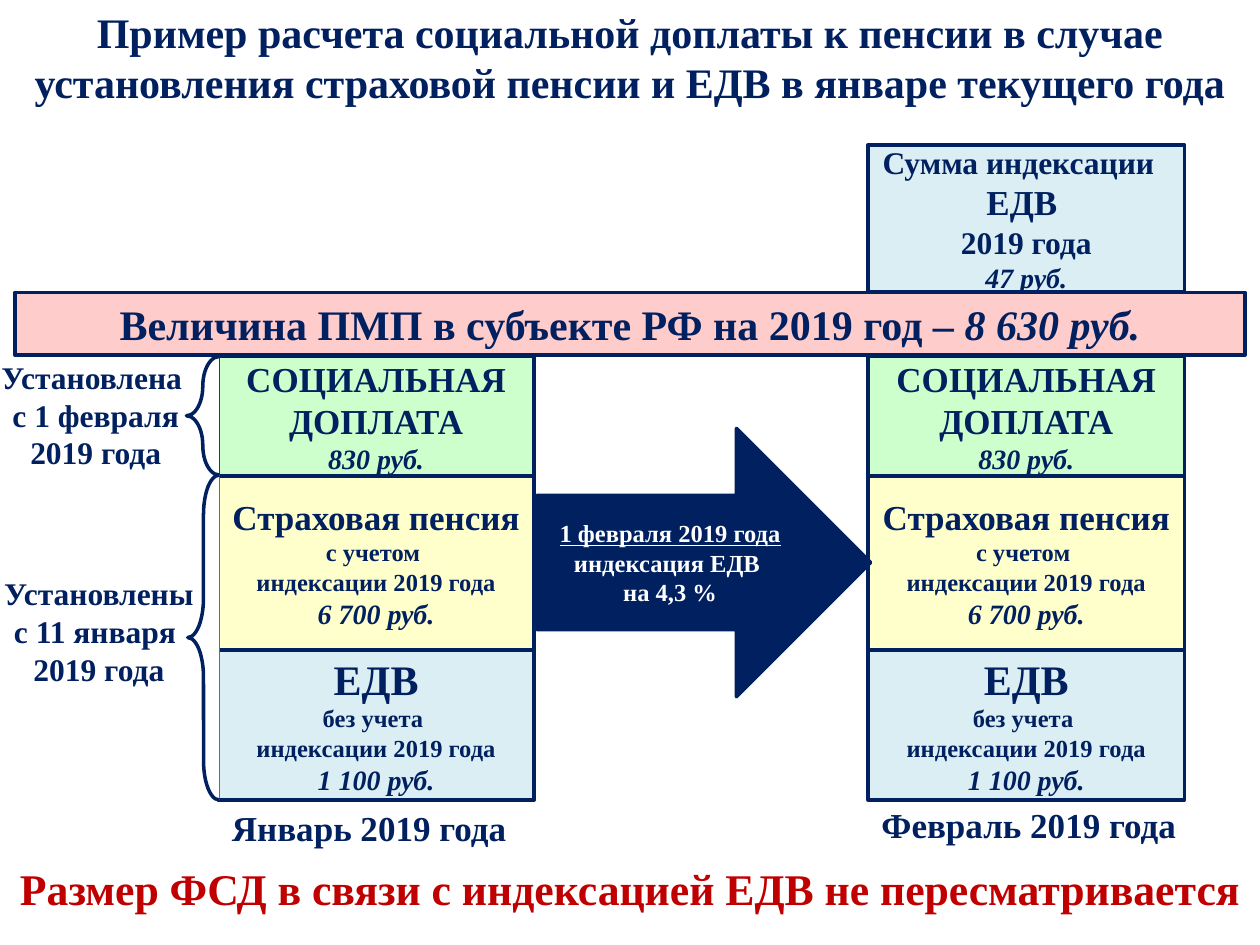
"""Build the slide on the social pension supplement before and after indexation."""
import pptx
import pptx.util
import pptx.dml.color
import pptx.enum.shapes
import pptx.enum.text

Inches = pptx.util.Inches
Shape = pptx.enum.shapes.MSO_SHAPE
Anchor = pptx.enum.text.MSO_ANCHOR
FONT = "Times New Roman"
COLORS = {
    "navy": "002060", "red": "C00000", "white": "FFFFFF", "pink": "FFCCCC",
    "blue": "DBEEF4", "yellow": "FFFFCC", "green": "CCFFCC",
}

TITLE = ("Пример расчета социальной доплаты к пенсии в случае "
         "установления страховой пенсии и ЕДВ в январе текущего года")
THRESHOLD = [[("Величина ПМП в субъекте РФ на 2019 год – ", {}),
              ("8 630 руб.", {"italic": True})]]
ARROW = [[("1 февраля 2019 года ", {"underline": True}), ("индексация ЕДВ ", {})],
         "на 4,3 %"]
CONCLUSION = "Размер ФСД в связи с индексацией ЕДВ не пересматривается"


def amount(text):
    """Return a paragraph holding a sum in italics."""
    return [(text, {"size": 16, "italic": True})]


def sized(text, size):
    """Return a paragraph of one size."""
    return [(text, {"size": size})]


COLUMN_LEFTS = [1.73, 6.89]
COLUMN_WIDTH = 2.51
LAYERS = [
    (2.83, 0.95, "green", [sized("СОЦИАЛЬНАЯ ДОПЛАТА", 20), amount("830 руб.")]),
    (3.77, 1.39, "yellow", [sized("Страховая пенсия ", 20), sized("с учетом ", 14),
                            sized("индексации 2019 года", 14), amount("6 700 руб.")]),
    (5.15, 1.2, "blue", [sized("ЕДВ", 24), sized("без учета ", 14),
                         sized("индексации 2019 года", 14), amount("1 100 руб.")]),
]
INDEXATION = [sized("Сумма индексации  ", 18), sized("ЕДВ ", 20),
              sized("2019 года", 18), amount("47 руб.")]
BRACES = [(1.49, 3.77, 0.25, 2.58), (1.48, 2.83, 0.26, 0.94)]
LABELS = [
    ((-0.08, 4.51, 1.73, 1.01), 18, "navy",
     ["Установлены ", "с 11 января ", "2019 года"]),
    ((-0.17, 2.79, 1.86, 1.01), 18, "navy",
     ["Установлена ", "с 1 февраля", "2019 года"]),
    ((1.6, 6.35, 2.66, 0.44), 20, "navy", ["Январь 2019 года"]),
    ((6.77, 6.33, 2.79, 0.44), 20, "navy", ["Февраль 2019 года"]),
    ((0, 6.79, 10, 0.52), 25, "red", [CONCLUSION]),
]


def rgb(name):
    """Return a named colour."""
    return pptx.dml.color.RGBColor.from_string(COLORS[name])


def write(box, paragraphs, size=18, color="navy", anchor=Anchor.TOP):
    """Fill a box with centred bold paragraphs of plain text or formatted spans."""
    frame = box.text_frame
    frame.word_wrap = True
    frame.auto_size = pptx.enum.text.MSO_AUTO_SIZE.NONE
    frame.vertical_anchor = anchor
    for index, content in enumerate(paragraphs):
        para = frame.add_paragraph() if index else frame.paragraphs[0]
        para.alignment = pptx.enum.text.PP_ALIGN.CENTER
        spans = [(content, {})] if isinstance(content, str) else content
        for text, style in spans:
            span = para.add_run()
            span.text = text
            span.font.name = FONT
            span.font.bold = True
            span.font.size = pptx.util.Pt(style.get("size", size))
            span.font.italic = style.get("italic")
            span.font.underline = style.get("underline")
            span.font.color.rgb = rgb(color)


def draw(page, kind, place, fill):
    """Add a preset shape with a navy outline."""
    shape = page.shapes.add_shape(kind, *map(Inches, place))
    shape.shadow.inherit = False
    shape.fill.solid()
    shape.fill.fore_color.rgb = rgb(fill)
    shape.line.color.rgb = rgb("navy")
    shape.line.width = pptx.util.Pt(2)
    return shape


def main():
    """Compose the slide and save it."""
    deck = pptx.Presentation()
    deck.slide_width, deck.slide_height = Inches(10), Inches(7.5)
    page = deck.slides.add_slide(deck.slide_layouts[5])

    title = page.shapes.title
    title.left, title.top = Inches(0), Inches(0)
    title.width, title.height = Inches(10), Inches(1.15)
    write(title, [TITLE], size=24)

    for left in COLUMN_LEFTS:
        for top, height, fill, paragraphs in reversed(LAYERS):
            box = draw(page, Shape.RECTANGLE, (left, top, COLUMN_WIDTH, height), fill)
            write(box, paragraphs, anchor=Anchor.MIDDLE)
    box = draw(page, Shape.RECTANGLE, (COLUMN_LEFTS[1], 1.15, COLUMN_WIDTH, 1.17), "blue")
    write(box, INDEXATION, anchor=Anchor.MIDDLE)

    bar = draw(page, Shape.RECTANGLE, (0.12, 2.32, 9.76, 0.5), "pink")
    write(bar, THRESHOLD, size=24)
    arrow = draw(page, Shape.RIGHT_ARROW, (4.26, 3.4, 2.65, 2.13), "navy")
    write(arrow, ARROW, size=14, color="white", anchor=Anchor.MIDDLE)

    for place in BRACES:
        brace = draw(page, Shape.LEFT_BRACE, place, "white")
        brace.adjustments[0] = 1.25
        brace.adjustments[1] = 0.5
    for place, size, color, paragraphs in LABELS:
        label = page.shapes.add_textbox(*map(Inches, place))
        write(label, paragraphs, size=size, color=color)

    deck.save("out.pptx")


if __name__ == "__main__":
    main()
